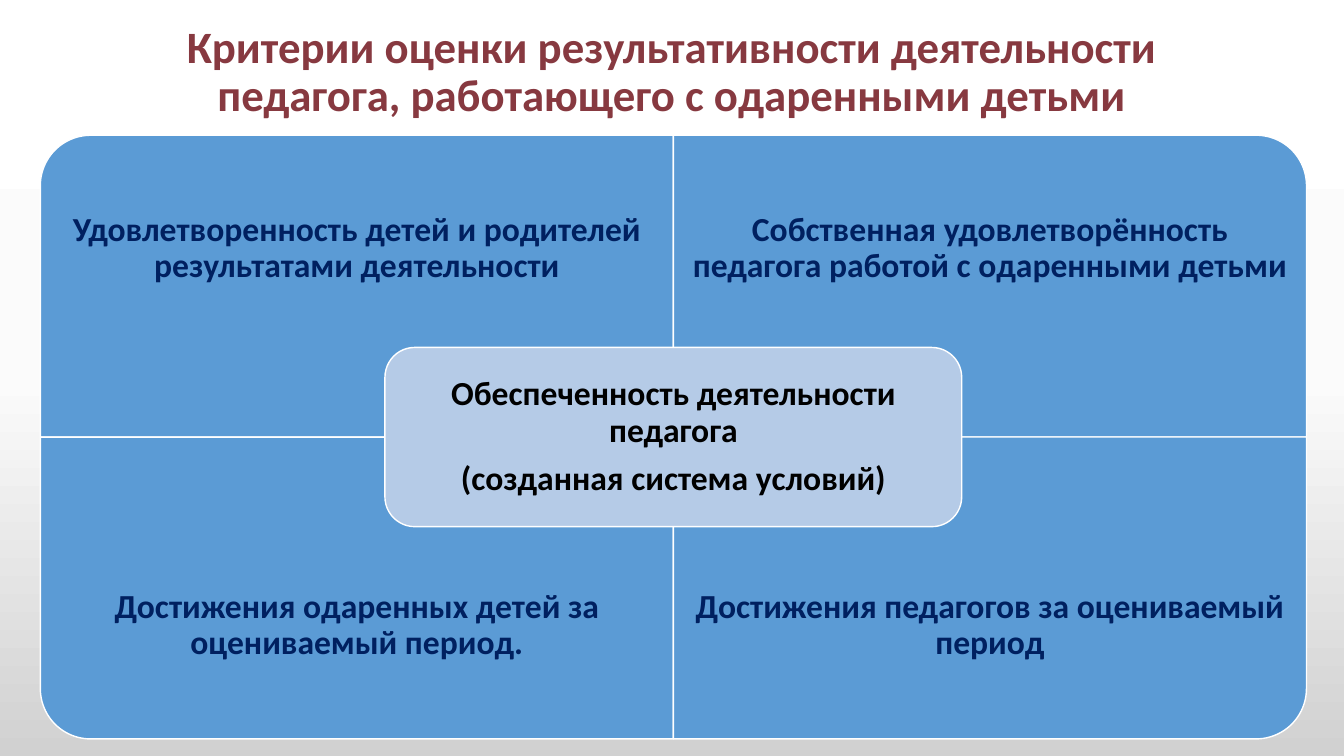
from copy import deepcopy

from pptx import Presentation
from pptx.dml.color import RGBColor
from pptx.enum import shapes, text
from pptx.oxml.ns import qn
from pptx.util import Pt

TITLE = "Критерии оценки результативности деятельности педагога, работающего с одаренными детьми"
QUADRANTS = [
    ("Удовлетворенность детей и родителей результатами деятельности", 0, 0, 270),
    ("Собственная удовлетворённость педагога работой с одаренными детьми", 1, 0, 0),
    ("Достижения одаренных детей за оцениваемый период.", 0, 1, 180),
    ("Достижения педагогов за оцениваемый период", 1, 1, 90),
]
CENTRE = ["Обеспеченность деятельности педагога", "(созданная система условий)"]
BACKGROUND = [(0, "FFFFFF"), (0.5, "FBFBFB"), (1, "D1D1D1")]

LEFT, TOP = 28.8, 96.6
QUADRANT_WIDTH, QUADRANT_HEIGHT = 452.2, 215.6
LABEL_HEIGHT = QUADRANT_HEIGHT * 0.75
CENTRE_WIDTH, CENTRE_HEIGHT = 412, 128
CENTRE_INSET = 6.25


def colour(value):
    return RGBColor.from_string(value)


def paint_background(slide):
    fill = slide.background.fill
    fill.gradient()
    fill.gradient_angle = 270
    stop_list = slide.element.find(".//" + qn("a:gsLst"))
    stop_list.append(deepcopy(stop_list[-1]))
    for stop, (position, value) in zip(fill.gradient_stops, BACKGROUND):
        stop.position = position
        stop.color.rgb = colour(value)


def add_panel(slide, kind, left, top, width, height, fill, rotation=0):
    if rotation % 180:
        left += (width - height) / 2
        top += (height - width) / 2
        width, height = height, width
    shape = slide.shapes.add_shape(kind, Pt(left), Pt(top), Pt(width), Pt(height))
    shape.rotation = rotation
    shape.shadow.inherit = False
    shape.fill.solid()
    shape.fill.fore_color.rgb = colour(fill)
    shape.line.color.rgb = colour("FFFFFF")
    shape.line.width = Pt(1)


def add_text(slide, lines, left, top, width, height, size, value, inset, gap=0):
    box = slide.shapes.add_textbox(Pt(left), Pt(top), Pt(width), Pt(height))
    frame = box.text_frame
    frame.word_wrap = True
    frame.vertical_anchor = text.MSO_ANCHOR.MIDDLE
    frame.margin_left = frame.margin_right = Pt(inset)
    frame.margin_top = frame.margin_bottom = Pt(inset)
    frame.text = "\n".join(lines)
    for paragraph in frame.paragraphs:
        paragraph.alignment = text.PP_ALIGN.CENTER
        paragraph.line_spacing = 0.9
        paragraph.space_after = Pt(gap)
        paragraph.font.name = "Calibri"
        paragraph.font.size = Pt(size)
        paragraph.font.bold = True
        paragraph.font.color.rgb = colour(value)


def main():
    presentation = Presentation()
    presentation.slide_width, presentation.slide_height = Pt(960), Pt(540)
    slide = presentation.slides.add_slide(presentation.slide_layouts[6])
    paint_background(slide)
    add_text(slide, [TITLE], 66, 0, 828, 104.4, 32, "873940", 7.2)

    for label, column, row, rotation in QUADRANTS:
        left = LEFT + column * QUADRANT_WIDTH
        top = TOP + row * QUADRANT_HEIGHT
        add_panel(slide, shapes.MSO_SHAPE.ROUND_1_RECTANGLE, left, top,
                  QUADRANT_WIDTH, QUADRANT_HEIGHT, "5B9BD5", rotation)
        label_top = top + row * (QUADRANT_HEIGHT - LABEL_HEIGHT)
        add_text(slide, [label], left, label_top, QUADRANT_WIDTH, LABEL_HEIGHT,
                 24, "002060", 13.5, 8.4)

    left = LEFT + QUADRANT_WIDTH - CENTRE_WIDTH / 2
    top = TOP + QUADRANT_HEIGHT - CENTRE_HEIGHT / 2
    add_panel(slide, shapes.MSO_SHAPE.ROUNDED_RECTANGLE, left, top,
              CENTRE_WIDTH, CENTRE_HEIGHT, "B5CBE7")
    add_text(slide, CENTRE, left + CENTRE_INSET, top + CENTRE_INSET,
             CENTRE_WIDTH - 2 * CENTRE_INSET, CENTRE_HEIGHT - 2 * CENTRE_INSET,
             24, "000000", 7.2, 8.4)
    presentation.save("out.pptx")


if __name__ == "__main__":
    main()
